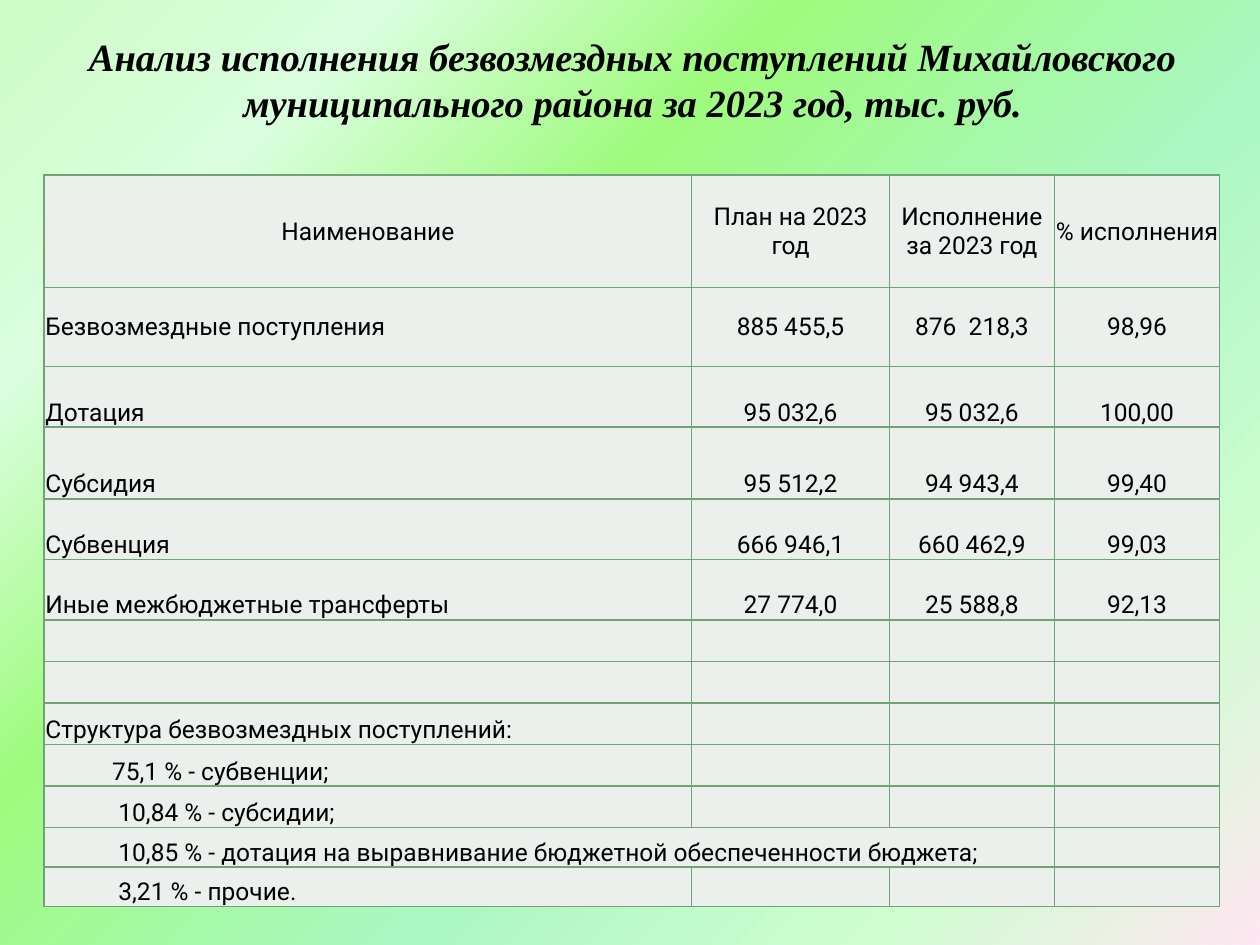
import copy
import pptx
import pptx.dml.color
import pptx.enum.text
import pptx.oxml
import pptx.oxml.ns
import pptx.util

ALIGN = pptx.enum.text.PP_ALIGN
ANCHOR = pptx.enum.text.MSO_ANCHOR


def paint(target, value):
    target.rgb = pptx.dml.color.RGBColor.from_string(value)


def write(frame, text, font="Roboto", size=14, align=ALIGN.CENTER, bold=False, italic=False):
    frame.word_wrap = True
    para = frame.paragraphs[0]
    para.alignment = align
    span = para.add_run()
    span.text = text
    span.font.name = font
    span.font.size = pptx.util.Pt(size)
    span.font.bold = bold
    span.font.italic = italic
    paint(span.font.color, "000000")


deck = pptx.Presentation()
deck.slide_width = pptx.util.Inches(10)
deck.slide_height = pptx.util.Inches(7.5)
column = deck.slide_width / 100
row = deck.slide_height / 100
page = deck.slides.add_slide(deck.slide_layouts[5])

gradient = [(0, "CEFBC7"), (18, "DAFEDD"), (36, "9EFB7D"),
            (61, "ABF7C3"), (82, "CFFDD0"), (100, "FEE7F2")]
backdrop = page.background.fill
backdrop.gradient()
backdrop.gradient_angle = 315
stop_list = page._element.find(".//" + pptx.oxml.ns.qn("a:gsLst"))
while len(stop_list) < len(gradient):
    stop_list.append(copy.deepcopy(stop_list[0]))
for stop, (position, shade) in zip(backdrop.gradient_stops, gradient):
    stop.position = position / 100
    paint(stop.color, shade)

title = page.shapes.title
title.left, title.top = int(0.2 * column), int(2.8 * row)
title.width, title.height = int(100 * column), int(11.2 * row)
title.text_frame.vertical_anchor = ANCHOR.MIDDLE
write(title.text_frame,
      "Анализ исполнения безвозмездных поступлений Михайловского "
      "муниципального района за 2023 год, тыс. руб.",
      font="Times New Roman", size=22, bold=True, italic=True)

records = [
    ["Наименование", "План на 2023 год", "Исполнение за 2023 год", "% исполнения"],
    ["Безвозмездные поступления", "885 455,5", "876  218,3", "98,96"],
    ["Дотация", "95 032,6", "95 032,6", "100,00"],
    ["Субсидия", "95 512,2", "94 943,4", "99,40"],
    ["Субвенция", "666 946,1", "660 462,9", "99,03"],
    ["Иные межбюджетные трансферты", "27 774,0", "25 588,8", "92,13"],
    [],
    [],
    ["Структура безвозмездных поступлений:"],
    ["75,1 % - субвенции;"],
    ["10,84 % - субсидии;"],
    ["10,85 % - дотация на выравнивание бюджетной обеспеченности бюджета;"],
    ["3,21 % - прочие."],
]
widths = [51.4, 15.7, 13.1, 13.1]
heights = [11.87, 8.4, 6.4, 7.6, 6.4, 6.4] + [4.4] * 5 + [3.87] * 2
indents = {9: 5.4, 10: 5.9, 11: 5.9, 12: 5.9}
merged_row = 11

table = page.shapes.add_table(
    len(heights), len(widths), int(3.5 * column), int(18.53 * row),
    int(sum(widths) * column), int(sum(heights) * row)).table
table.first_row = False
table.horz_banding = False
for table_column, width in zip(table.columns, widths):
    table_column.width = int(width * column)
for table_row, height in zip(table.rows, heights):
    table_row.height = int(height * row)

for row_index, record in enumerate(records):
    for column_index in range(len(widths)):
        cell = table.cell(row_index, column_index)
        first = column_index == 0
        indent = indents.get(row_index, 0.1) if first else 0.1
        cell.margin_left = int(indent * column)
        cell.margin_right = int(0.1 * column)
        cell.margin_top = int(0.1 * row)
        cell.margin_bottom = 0
        cell.vertical_anchor = ANCHOR.MIDDLE if row_index < 2 else ANCHOR.BOTTOM
        if column_index < len(record):
            align = ALIGN.LEFT if first and row_index else ALIGN.CENTER
            write(cell.text_frame, record[column_index], align=align)
        properties = cell._tc.get_or_add_tcPr()
        for side in ("lnL", "lnR", "lnT", "lnB"):
            properties.append(pptx.oxml.parse_xml(
                f'<a:{side} {pptx.oxml.ns.nsdecls("a")} w="12700"><a:solidFill>'
                f'<a:srgbClr val="72A376"/></a:solidFill></a:{side}>'))
        cell.fill.solid()
        paint(cell.fill.fore_color, "EBF0EC")

table.cell(merged_row, 0).merge(table.cell(merged_row, 2))

deck.save("out.pptx")
